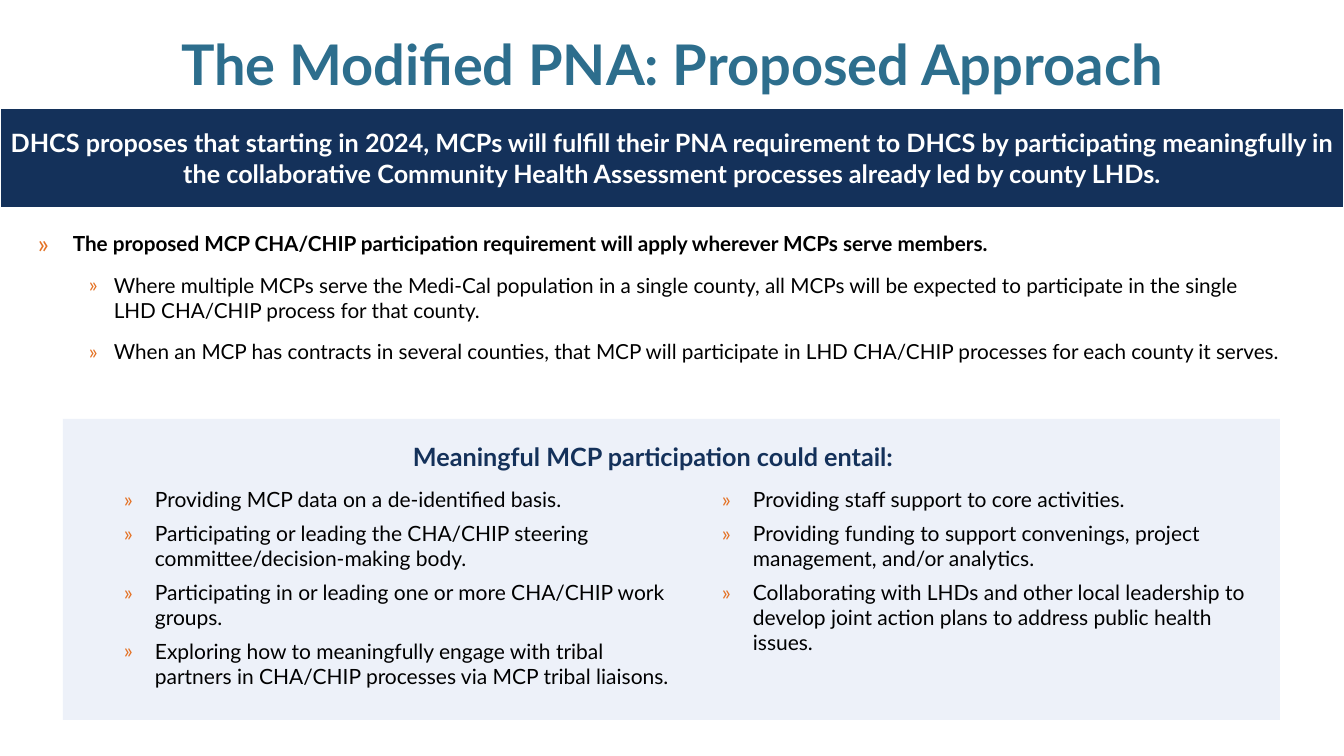
from lxml.etree import SubElement
from pptx import Presentation
from pptx.dml.color import RGBColor
from pptx.enum.shapes import MSO_SHAPE as Shape
from pptx.enum.text import MSO_ANCHOR as Anchor, PP_ALIGN as Align
from pptx.oxml.ns import qn
from pptx.util import Pt

EMU_PER_PX = 914400 / 100.8
FONT = "Lato"
COLORS = {
    "teal": "2D6E8D",
    "navy": "14315A",
    "pale": "EDF1F9",
    "orange": "E47225",
    "white": "FFFFFF",
    "black": "000000",
}
TITLE = "The Modified PNA: Proposed Approach"
PROPOSAL = (
    "DHCS proposes that starting in 2024, MCPs will fulfill their PNA requirement to DHCS "
    "by participating meaningfully in the collaborative Community Health Assessment "
    "processes already led by county LHDs."
)
REQUIREMENT = "The proposed MCP CHA/CHIP participation requirement will apply wherever MCPs serve members."
COUNTY_RULES = [
    "Where multiple MCPs serve the Medi-Cal population in a single county, all MCPs will be "
    "expected to participate in the single LHD CHA/CHIP process for that county.",
    "When an MCP has contracts in several counties, that MCP will participate in LHD CHA/CHIP "
    "processes for each county it serves.",
]
PANEL_HEADING = "Meaningful MCP participation could entail:"
PARTICIPATION_COLUMNS = [
    [
        "Providing MCP data on a de-identified basis.",
        "Participating or leading the CHA/CHIP steering committee/decision-making body.",
        "Participating in or leading one or more CHA/CHIP work groups.",
        "Exploring how to meaningfully engage with tribal partners in CHA/CHIP processes "
        "via MCP tribal liaisons.",
    ],
    [
        "Providing staff support to core activities.",
        "Providing funding to support convenings, project management, and/or analytics.",
        "Collaborating with LHDs and other local leadership to develop joint action plans "
        "to address public health issues.",
    ],
]


def px(length):
    return round(length * EMU_PER_PX)


def rgb(name):
    return RGBColor.from_string(COLORS[name])


def set_attributes(target, values):
    for name, value in values.items():
        setattr(target, name, value)


def write_paragraph(paragraph, text, size, color="black", bold=False, **layout):
    run = paragraph.add_run()
    run.text = text
    set_attributes(run.font, {"name": FONT, "size": Pt(size), "bold": bold})
    run.font.color.rgb = rgb(color)
    set_attributes(paragraph, layout)


def add_bullet(paragraph, margin, hanging, level=1, size_percent=100):
    paragraph.level = level
    properties = paragraph._p.get_or_add_pPr()
    properties.set("marL", str(px(margin)))
    properties.set("indent", str(-px(hanging)))
    bullet_color = SubElement(properties, qn("a:buClr"))
    SubElement(bullet_color, qn("a:srgbClr"), val=COLORS["orange"])
    SubElement(properties, qn("a:buSzPct"), val=str(size_percent * 1000))
    SubElement(properties, qn("a:buFont"), typeface=FONT)
    SubElement(properties, qn("a:buChar"), char="»")


def add_text_frame(slide, box, anchor=Anchor.TOP):
    frame = slide.shapes.add_textbox(*map(px, box)).text_frame
    set_attributes(frame, {"word_wrap": True, "vertical_anchor": anchor})
    return frame


def add_rectangle(slide, box, fill, line=None):
    shape = slide.shapes.add_shape(Shape.RECTANGLE, *map(px, box))
    shape.shadow.inherit = False
    shape.fill.solid()
    shape.fill.fore_color.rgb = rgb(fill)
    if line:
        shape.line.color.rgb = rgb(line)
        shape.line.width = Pt(1)
    else:
        shape.line.fill.background()
    return shape


def add_title(slide):
    frame = add_text_frame(slide, (0, 17, 1344, 100), Anchor.MIDDLE)
    write_paragraph(frame.paragraphs[0], TITLE, 40, "teal", True,
                    alignment=Align.CENTER, line_spacing=0.9)


def add_proposal_band(slide):
    frame = add_rectangle(slide, (0, 108, 1344, 100), "navy", "white").text_frame
    set_attributes(frame, {"word_wrap": True, "vertical_anchor": Anchor.MIDDLE})
    write_paragraph(frame.paragraphs[0], PROPOSAL, 18, "white", True, alignment=Align.CENTER)


def add_requirement(slide):
    frame = add_text_frame(slide, (28, 226, 1263, 177))
    lead = frame.paragraphs[0]
    write_paragraph(lead, REQUIREMENT, 14.8, bold=True, space_after=Pt(12))
    add_bullet(lead, 35, 35, level=0, size_percent=125)
    for rule in COUNTY_RULES:
        paragraph = frame.add_paragraph()
        write_paragraph(paragraph, rule, 14.8, space_after=Pt(12))
        add_bullet(paragraph, 76, 25)


def add_participation_column(slide, box, items):
    frame = add_text_frame(slide, box)
    for index, item in enumerate(items):
        paragraph = frame.add_paragraph() if index else frame.paragraphs[0]
        write_paragraph(paragraph, item, 15, space_after=Pt(6))
        add_bullet(paragraph, 82, 31)


def add_participation_panel(slide):
    add_rectangle(slide, (63, 419, 1217, 301), "pale")
    heading = add_text_frame(slide, (403, 436, 538, 40))
    write_paragraph(heading.paragraphs[0], PANEL_HEADING, 18, "navy", True)
    for index, items in enumerate(PARTICIPATION_COLUMNS):
        add_participation_column(slide, (63 + 598 * index, 482, 618, 230), items)


def main():
    presentation = Presentation()
    set_attributes(presentation, {"slide_width": px(1344), "slide_height": px(756)})
    slide = presentation.slides.add_slide(presentation.slide_layouts[6])
    add_title(slide)
    add_proposal_band(slide)
    add_requirement(slide)
    add_participation_panel(slide)
    presentation.save("out.pptx")


if __name__ == "__main__":
    main()
